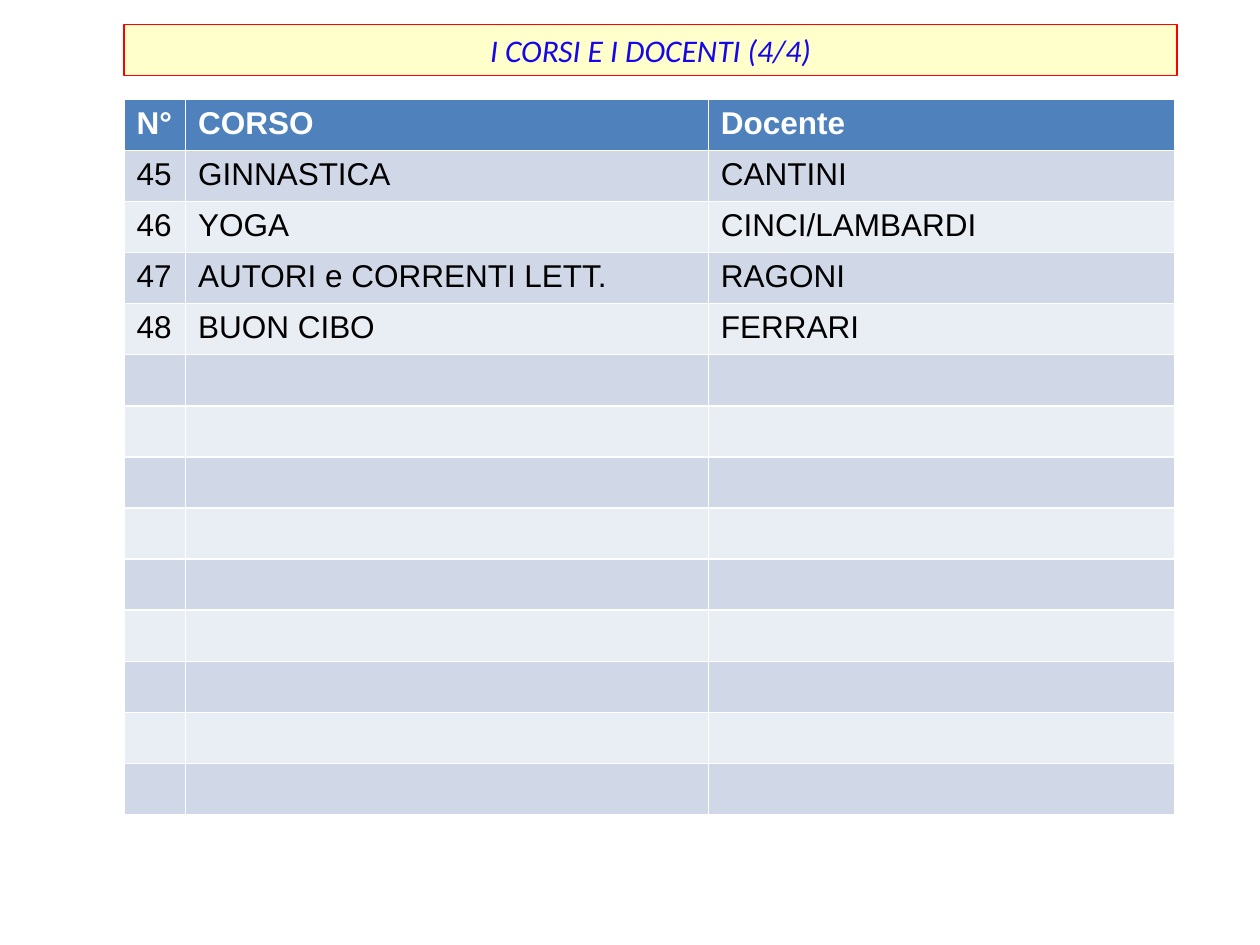
from dataclasses import dataclass

from pptx import Presentation
from pptx.dml.color import RGBColor as Rgb
from pptx.enum.text import MSO_ANCHOR as Anchor, MSO_AUTO_SIZE as Fit, PP_ALIGN as Align
from pptx.util import Cm, Pt


@dataclass(frozen=True)
class Theme:
    head: str = "4F81BD"
    bands: tuple = ("D0D8E8", "E9EDF4")
    light: str = "FFFFFF"
    dark: str = "000000"
    cream: str = "FFFFCC"
    red: str = "FF0000"
    blue: str = "1606EA"
    size: int = 18
    body: str = "Arial"
    title: str = "Calibri"


THEME = Theme()
LEFT = 2.5
WIDTHS = (1.24, 10.54, 9.4)
ROW = 1.03
COUNT = 14
COURSES = (
    ("N°", "CORSO", "Docente"),
    ("45", "GINNASTICA", "CANTINI"),
    ("46", "YOGA", "CINCI/LAMBARDI"),
    ("47", "AUTORI e CORRENTI LETT.", "RAGONI"),
    ("48", "BUON CIBO", "FERRARI"),
)


def paint(fill, color):
    fill.solid()
    fill.fore_color.rgb = Rgb.from_string(color)


def style(para, face, color, bold=False, italic=False):
    for run in para.runs:
        font = run.font
        font.name, font.size = face, Pt(THEME.size)
        font.bold, font.italic = bold, italic
        font.color.rgb = Rgb.from_string(color)


def add_title(slide, text):
    title = slide.shapes.title
    title.left, title.top = Cm(LEFT), Cm(0.5)
    title.width, title.height = Cm(21.23), Cm(1.03)
    paint(title.fill, THEME.cream)
    title.line.color.rgb = Rgb.from_string(THEME.red)
    title.line.width = Pt(0.75)
    frame = title.text_frame
    frame.text = text
    frame.auto_size = Fit.NONE
    frame.vertical_anchor = Anchor.MIDDLE
    para = frame.paragraphs[0]
    para.alignment = Align.CENTER
    style(para, THEME.title, THEME.blue, italic=True)


def fill_row(row, texts, back, color, bold):
    for cell in row.cells:
        paint(cell.fill, back)
    for cell, text in zip(row.cells, texts):
        cell.text_frame.text = text
        style(cell.text_frame.paragraphs[0], THEME.body, color, bold)


def add_grid(slide, data):
    table = slide.shapes.add_table(
        COUNT, len(WIDTHS), Cm(LEFT), Cm(2), Cm(sum(WIDTHS)), Cm(ROW * COUNT)
    ).table
    for col, width in zip(table.columns, WIDTHS):
        col.width = Cm(width)
    for i, row in enumerate(table.rows):
        row.height = Cm(ROW)
        head = i == 0
        back = THEME.head if head else THEME.bands[(i - 1) % 2]
        color = THEME.light if head else THEME.dark
        fill_row(row, data[i] if i < len(data) else (), back, color, head)


def main():
    deck = Presentation()
    deck.slide_width, deck.slide_height = Cm(25.4), Cm(19.05)
    slide = deck.slides.add_slide(deck.slide_layouts[5])
    add_title(slide, "I CORSI E I DOCENTI (4/4)")
    add_grid(slide, COURSES)
    deck.save("out.pptx")


if __name__ == "__main__":
    main()
